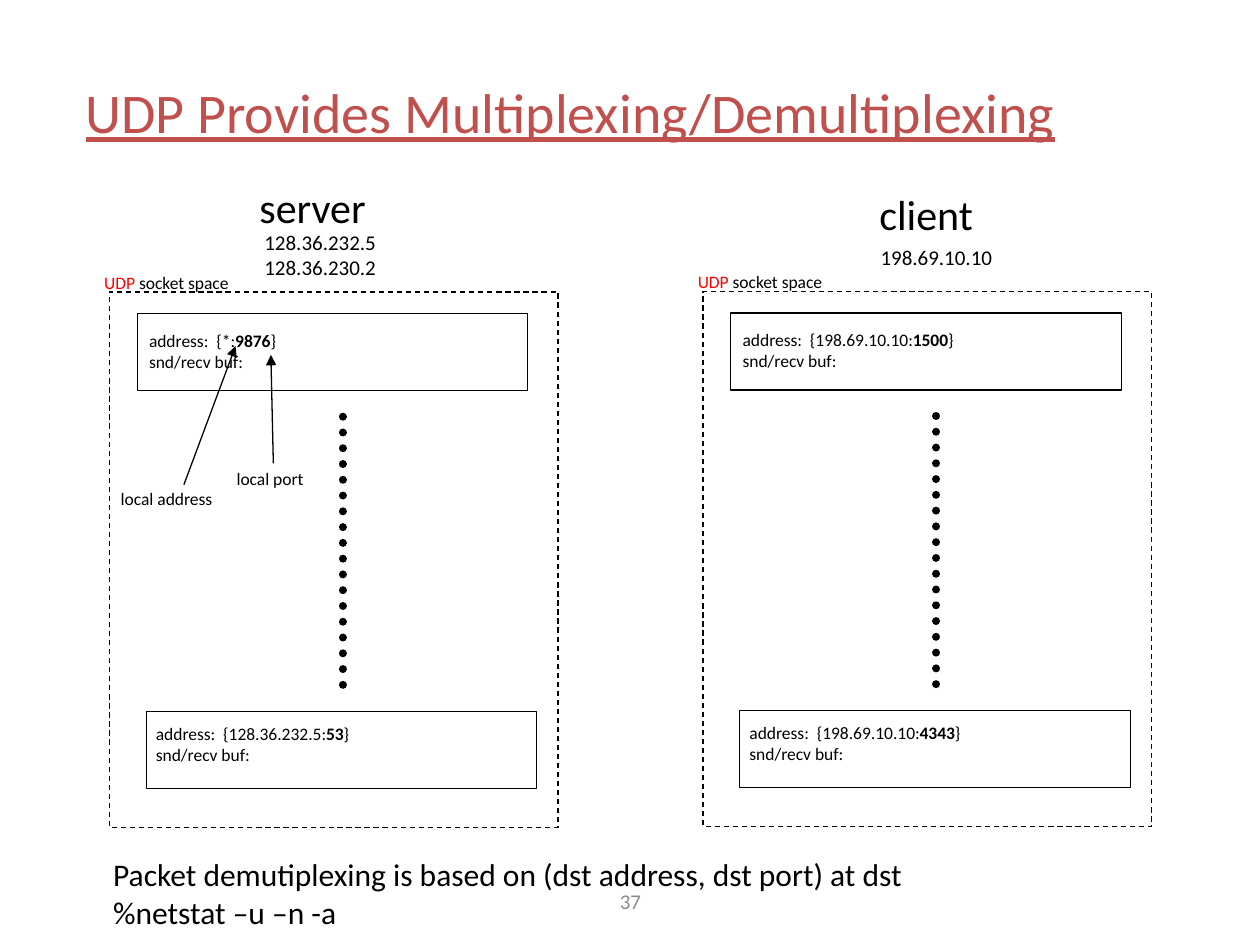
from lxml import etree
from pptx import Presentation
from pptx.dml.color import RGBColor
from pptx.enum import dml, shapes, text
from pptx.oxml import ns
from pptx.util import Pt

HUES = {"ink": "000000", "red": "FF0000", "title": "C0504D", "gray": "8C8C8C"}
MID = text.MSO_ANCHOR.MIDDLE
BOLD = {"bold": True}


def hue(name):
    """Return the named colour."""
    return RGBColor.from_string(HUES[name])


def write(slide, box, paras, size, tint="ink", anchor=text.MSO_ANCHOR.TOP,
          align=text.PP_ALIGN.LEFT):
    """Add a text box of paragraphs, each a list of (words, format) runs."""
    frame = slide.shapes.add_textbox(*map(Pt, box)).text_frame
    frame.word_wrap, frame.vertical_anchor = True, anchor
    for i, runs in enumerate(paras):
        para = frame.add_paragraph() if i else frame.paragraphs[0]
        para.alignment = align
        for words, form in runs:
            run = para.add_run()
            run.text = words
            look = {"name": "Calibri", "size": Pt(size), "tint": tint, **form}
            run.font.color.rgb = hue(look.pop("tint"))
            for key, val in look.items():
                setattr(run.font, key, val)


def frame(slide, box, dash=None):
    """Add an unfilled rectangle with a thin outline."""
    rect = slide.shapes.add_shape(shapes.MSO_SHAPE.RECTANGLE, *map(Pt, box))
    rect.shadow.inherit = False
    rect.fill.background()
    rect.line.color.rgb = hue("ink")
    for key, val in {"width": Pt(0.75), "dash_style": dash}.items():
        setattr(rect.line, key, val)


def rule(slide, ends, width):
    """Add a straight line and return it with its outline element."""
    line = slide.shapes.add_connector(
        shapes.MSO_CONNECTOR.STRAIGHT, *map(Pt, ends))
    line.line.color.rgb = hue("ink")
    line.line.width = Pt(width)
    props = line.element.spPr
    etree.SubElement(props, ns.qn("a:effectLst"))
    return line, props.find(ns.qn("a:ln"))


def arrow(slide, ends):
    """Add a thin line with a triangle at its far end."""
    edge = rule(slide, ends, 0.75)[1]
    etree.SubElement(edge, ns.qn("a:tailEnd"), type="triangle")


def dots(slide, ends):
    """Add a line of round dots."""
    line, edge = rule(slide, ends, 4.5)
    line.line.dash_style = dml.MSO_LINE.ROUND_DOT
    edge.set("cap", "rnd")


def entry(slide, box, shift, host, port):
    """Draw one socket with its address and buffer lines."""
    x, y, w, h = box
    frame(slide, box)
    write(slide, (x + shift[0], y + shift[1], 160, 31),
          [[("address:  {" + host + ":", {}), (port, BOLD), ("}", {})],
           [("snd/recv buf:", {})]], 10)


def panel(slide, box, name, spot, hosts, place, socks):
    """Draw a machine: its name, addresses and socket space."""
    x, y, w, h = box
    write(slide, (x + spot[0], y + spot[1], 87, 36), [[(name, {})]], 24,
          anchor=MID)
    write(slide, (x + place[0], y + place[1], 88, 36),
          [[(host, {})] for host in hosts], 12)
    frame(slide, box, dml.MSO_LINE.DASH)
    write(slide, (x - 10.1, y - 15, 100, 19.4),
          [[("UDP", {"tint": "red"}), (" socket space", {})]], 10)
    first, last = socks
    entry(slide, (x + 15.8, y + 12.5, 223.2, 44), (-0.3, 5.7), *first)
    entry(slide, (x + 21, y + 239.8, 223.2, 44), (-1.6, 2.9), *last)
    dots(slide, (x + 133.2, y + 71.3, x + 133.2, y + 224.6))


def notes(slide, box):
    """Label the parts of the first server address."""
    x, y = box[:2]
    arrow(slide, (x + 42.5, y + 110.2, x + 72, y + 31))
    arrow(slide, (x + 93.6, y + 98, x + 92.2, y + 36))
    write(slide, (x - 0.7, y + 108.8, 76, 19.4), [[("local address", {})]], 10)
    write(slide, (x + 65.5, y + 97.2, 60, 19.4), [[("local port", {})]], 10)


def main():
    """Build the slide and save it."""
    deck = Presentation()
    deck.slide_width, deck.slide_height = Pt(720), Pt(540)
    slide = deck.slides.add_slide(deck.slide_layouts[6])
    write(slide, (41.8, 18.7, 650.9, 90),
          [[("UDP Provides Multiplexing/Demultiplexing",
             {"underline": True})]], 32, "title", MID)
    server = (62.6, 166.8, 256.3, 306)
    client = (401.8, 166.4, 256.3, 306)
    panel(slide, server, "server", (78.5, -66.7),
          ["128.36.232.5", "128.36.230.2"], (81.4, -39.4),
          [("*", "9876"), ("128.36.232.5", "53")])
    panel(slide, client, "client", (93.6, -62),
          ["198.69.10.10"], (94.3, -30.3),
          [("198.69.10.10", "1500"), ("198.69.10.10", "4343")])
    notes(slide, server)
    write(slide, (57.6, 485.3, 544.3, 50.4),
          [[("Packet demutiplexing is based on (dst address, dst port) at dst",
             {})], [("%netstat –u –n -a", {})]], 18)
    write(slide, (246.2, 500.4, 228.2, 28.8), [[("37", {})]], 12, "gray", MID,
          text.PP_ALIGN.CENTER)
    deck.save("out.pptx")


if __name__ == "__main__":
    main()
